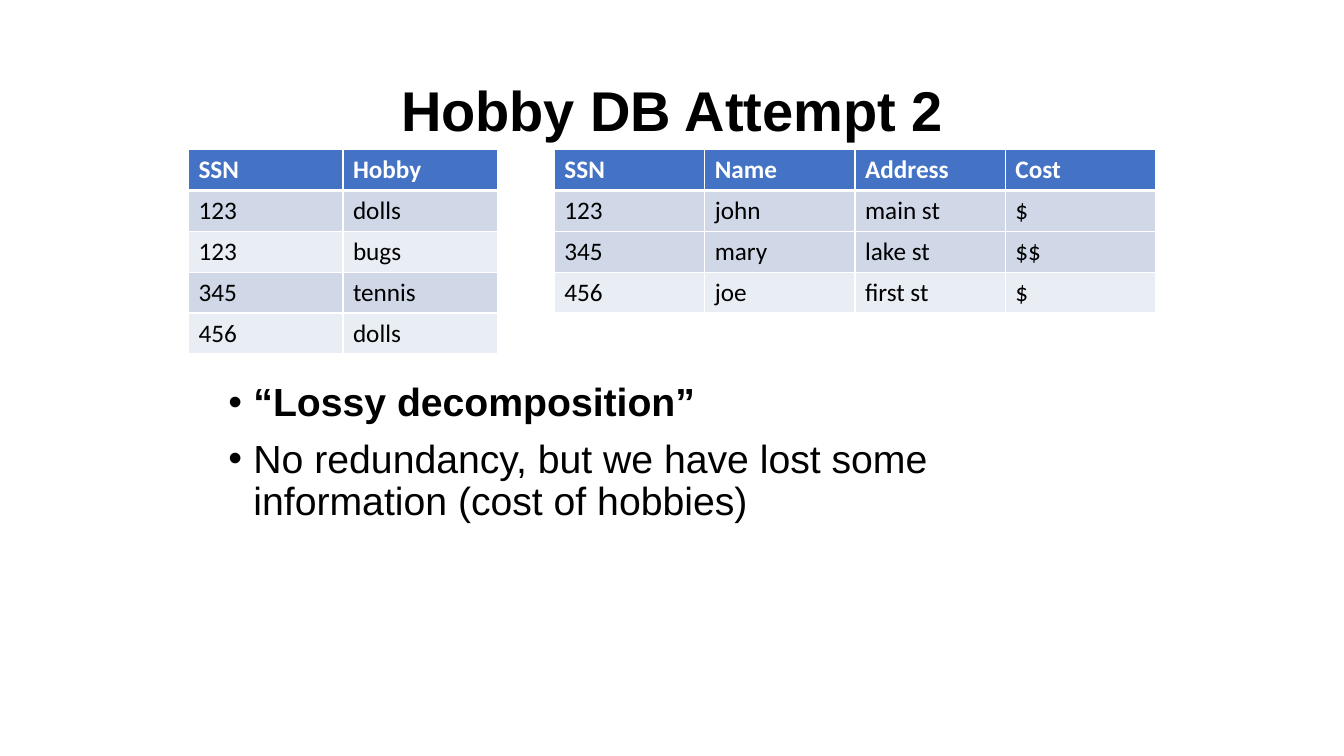
from dataclasses import dataclass

from lxml import etree
from pptx import Presentation
from pptx.dml.color import RGBColor
from pptx.enum.text import MSO_ANCHOR, PP_ALIGN
from pptx.oxml.ns import qn
from pptx.util import Pt

LEFT, CENTER = PP_ALIGN.LEFT, PP_ALIGN.CENTER
TOP, MIDDLE = MSO_ANCHOR.TOP, MSO_ANCHOR.MIDDLE


@dataclass(frozen=True)
class Theme:
    ink: str = "000000"
    white: str = "FFFFFF"
    head: str = "4472C4"
    dark: str = "D0D8E8"
    pale: str = "E9EDF4"
    sans: str = "Arial"
    grid: str = "Calibri"
    title: int = 40
    body: int = 28
    cell: int = 18


def write(para, text, font, size, color, bold=False, align=LEFT,
          lines=None, before=None):
    """Put one formatted run into a paragraph."""
    para.alignment = align
    if lines is not None:
        para.line_spacing = lines
    if before is not None:
        para.space_before = Pt(before)
    run = para.add_run()
    run.text = text
    run.font.name = font
    run.font.size = Pt(size)
    run.font.bold = bold
    run.font.color.rgb = RGBColor.from_string(color)


class Deck:
    def __init__(self, theme):
        self.theme = theme
        self.prs = Presentation()
        self.prs.slide_width, self.prs.slide_height = Pt(960), Pt(540)
        self.slide = self.prs.slides.add_slide(self.prs.slide_layouts[6])

    def frame(self, x, y, w, h, anchor=TOP):
        box = self.slide.shapes.add_textbox(Pt(x), Pt(y), Pt(w), Pt(h))
        box.text_frame.word_wrap = True
        box.text_frame.vertical_anchor = anchor
        return box.text_frame

    def title(self, text, *area):
        t = self.theme
        write(self.frame(*area, anchor=MIDDLE).paragraphs[0], text, t.sans,
              t.title, t.ink, bold=True, align=CENTER, lines=0.9)

    def bullets(self, items, *area, indent=18):
        t = self.theme
        frame = self.frame(*area)
        for i, (text, bold, before) in enumerate(items):
            para = frame.add_paragraph() if i else frame.paragraphs[0]
            write(para, text, t.sans, t.body, t.ink, bold=bold,
                  lines=0.9, before=before)
            props = para._p.get_or_add_pPr()
            props.set("marL", str(Pt(indent)))
            props.set("indent", str(-Pt(indent)))
            etree.SubElement(props, qn("a:buFont"), typeface=t.sans)
            etree.SubElement(props, qn("a:buChar"), char="•")

    def borders(self, cell, top, bottom):
        props = cell._tc.get_or_add_tcPr()
        sides = (("L", 1), ("R", 1), ("T", top), ("B", bottom))
        for i, (side, width) in enumerate(sides):
            line = etree.Element(qn("a:ln" + side), w=str(Pt(width)))
            fill = etree.SubElement(line, qn("a:solidFill"))
            etree.SubElement(fill, qn("a:srgbClr"), val=self.theme.white)
            props.insert(i, line)

    def table(self, rows, fills, x, y, col, row=29.2):
        t = self.theme
        count, wide = len(rows), len(rows[0])
        table = self.slide.shapes.add_table(
            count, wide, Pt(x), Pt(y), Pt(col * wide), Pt(row * count)).table
        for column in table.columns:
            column.width = Pt(col)
        for r, (texts, fill) in enumerate(zip(rows, fills)):
            table.rows[r].height = Pt(row)
            for c, text in enumerate(texts):
                cell = table.cell(r, c)
                cell.fill.solid()
                cell.fill.fore_color.rgb = RGBColor.from_string(fill)
                self.borders(cell, top=3 if r == 1 else 1,
                             bottom=1 if r else 3)
                write(cell.text_frame.paragraphs[0], text, t.grid, t.cell,
                      t.ink if r else t.white, bold=r == 0)


def main():
    theme = Theme()
    deck = Deck(theme)
    head, dark, pale = theme.head, theme.dark, theme.pale

    # Heading
    deck.title("Hobby DB Attempt 2", 66, 28.8, 828, 104.4)

    # Remarks
    deck.bullets([
        ("“Lossy decomposition”", True, 49),
        ("No redundancy, but we have lost some information "
         "(cost of hobbies)", False, 10),
    ], 156, 270, 648, 212.4)

    # People
    deck.table([
        ("SSN", "Name", "Address", "Cost"),
        ("123", "john", "main st", "$"),
        ("345", "mary", "lake st", "$$"),
        ("456", "joe", "first st", "$"),
    ], (head, dark, dark, pale), 396, 106.8, 107.4)

    # Hobbies
    deck.table([
        ("SSN", "Hobby"),
        ("123", "dolls"),
        ("123", "bugs"),
        ("345", "tennis"),
        ("456", "dolls"),
    ], (head, dark, pale, dark, pale), 134.6, 106.8, 110.4)

    deck.prs.save("out.pptx")


if __name__ == "__main__":
    main()
